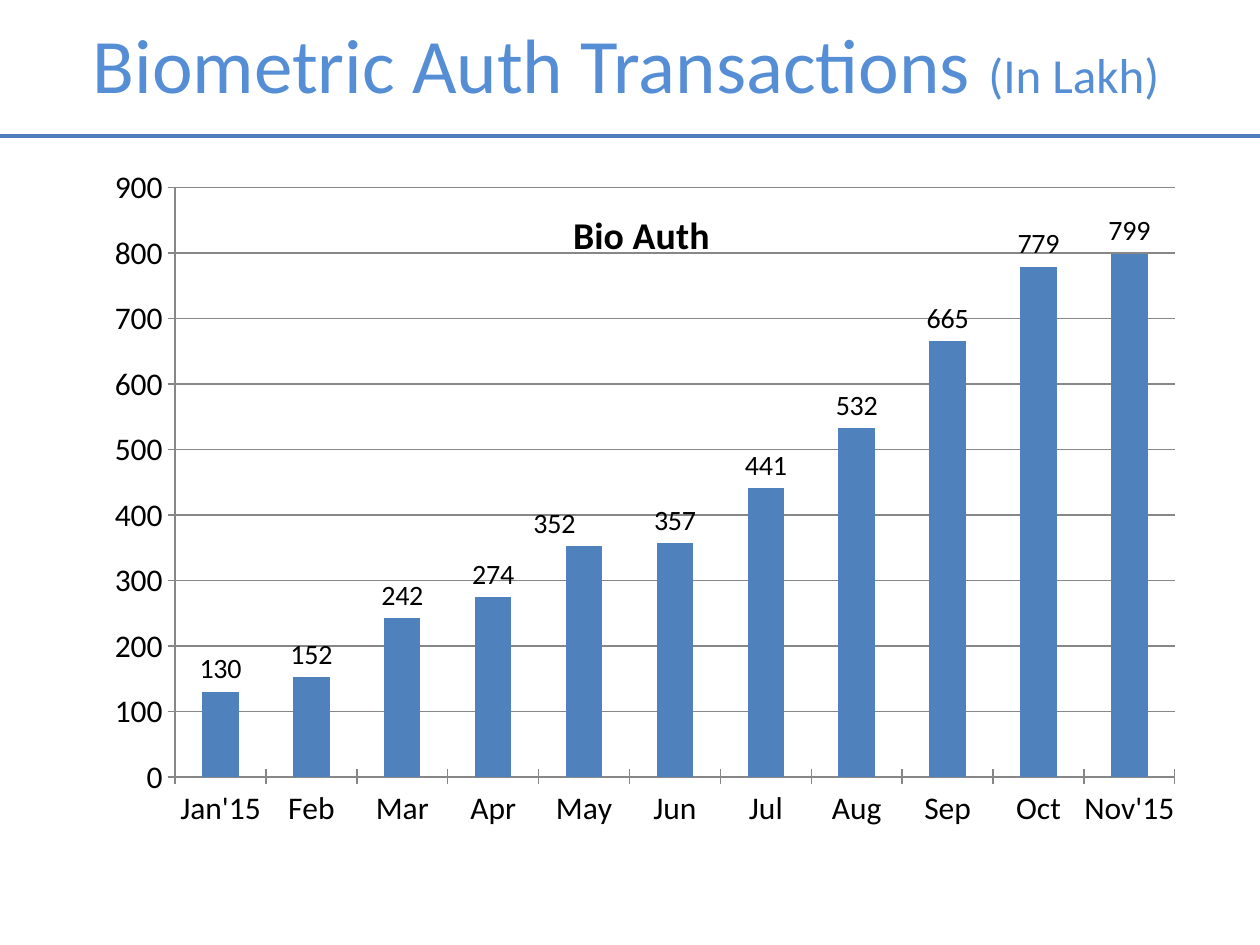
from typing import NamedTuple

from lxml import etree
from pptx import Presentation
from pptx import util as u
from pptx.chart.data import CategoryChartData
from pptx.dml.color import RGBColor
from pptx.enum import chart as ch, shapes, text
from pptx.oxml import parse_xml
from pptx.oxml.ns import nsdecls, qn

FONT = "Calibri"
BLACK, GREY, BLUE = "000000", "878787", "4F81BD"


class Box(NamedTuple):
    left: float
    top: float
    width: float
    height: float

    def cm(self) -> list[u.Cm]:
        return [u.Cm(v) for v in self]


class Month(NamedTuple):
    name: str
    count: int


MONTHS = [
    Month("Jan'15", 130), Month("Feb", 152), Month("Mar", 242),
    Month("Apr", 274), Month("May", 352), Month("Jun", 357),
    Month("Jul", 441), Month("Aug", 532), Month("Sep", 665),
    Month("Oct", 779), Month("Nov'15", 799),
]


def color(code: str) -> RGBColor:
    return RGBColor.from_string(code)


def style(font, size: float, code: str, bold: bool = False) -> None:
    font.name, font.size, font.bold = FONT, u.Pt(size), bold
    font.color.rgb = color(code)


def layout(**parts) -> etree._Element:
    """Make a manual chart layout from its named parts."""
    inner = "".join(f'<c:{k} val="{v}"/>' for k, v in parts.items())
    return parse_xml(f'<c:layout {nsdecls("c")}><c:manualLayout>{inner}'
                     "</c:manualLayout></c:layout>")


def place(node, after: str | None, new) -> None:
    """Put a layout in a chart node, in place of any old one."""
    for old in node.findall(qn("c:layout")):
        node.remove(old)
    spot = node.index(node.find(qn(after))) + 1 if after else 0
    node.insert(spot, new)


def add_title(slide) -> None:
    box = slide.shapes.add_textbox(*Box(1.19, 0.2, 22.86, 2.11).cm())
    frame = box.text_frame
    frame.word_wrap = True
    frame.vertical_anchor = text.MSO_ANCHOR.MIDDLE
    para = frame.paragraphs[0]
    para.alignment = text.PP_ALIGN.CENTER
    for words, size in (("Biometric Auth Transactions ", 44), ("(In Lakh)", 28)):
        run = para.add_run()
        run.text = words
        style(run.font, size, "558ED5")


def add_rule(slide) -> None:
    y = u.Cm(2.74)
    rule = slide.shapes.add_connector(
        shapes.MSO_CONNECTOR.STRAIGHT, 0, y, u.Cm(25.4), y)
    rule.line.color.rgb = color("4B7EBC")
    rule.line.width = u.Pt(2)
    etree.SubElement(rule.element.spPr, qn("a:effectLst"))


def add_bars(slide) -> None:
    data = CategoryChartData()
    data.categories = [m.name for m in MONTHS]
    data.add_series("Bio Auth", [m.count for m in MONTHS])
    chart = slide.shapes.add_chart(
        ch.XL_CHART_TYPE.COLUMN_CLUSTERED,
        *Box(1.27, 3.18, 23.06, 14.6).cm(), data).chart
    style(chart.font, 18, BLACK)
    chart.has_legend = False

    chart.has_title = True
    title = chart.chart_title
    title.text_frame.text = "Bio Auth"
    style(title.text_frame.paragraphs[0].font, 21.6, BLACK, bold=True)
    title.include_in_layout = False
    head = title._element
    place(head, "c:tx", layout(xMode="edge", yMode="edge", x=0.44, y=0.06))
    lay = head.find(qn("c:overlay"))
    if lay is None:
        lay = etree.Element(qn("c:overlay"))
        head.find(qn("c:layout")).addnext(lay)
    lay.set("val", "1")

    area = chart._chartSpace.chart.plotArea
    place(area, None, layout(layoutTarget="inner", xMode="edge", yMode="edge",
                             x=0.098, y=0.041, w=0.874, h=0.814))

    for axis in (chart.category_axis, chart.value_axis):
        axis.major_tick_mark = ch.XL_TICK_MARK.CROSS
        axis.format.line.color.rgb = color(GREY)
        style(axis.tick_labels.font, 18, BLACK)
    scale = chart.value_axis
    scale.minimum_scale, scale.maximum_scale, scale.major_unit = 0, 900, 100
    scale.major_gridlines.format.line.color.rgb = color(GREY)

    plot = chart.plots[0]
    plot.gap_width = 150
    plot.vary_by_categories = False
    bars = plot.series[0]
    bars.format.fill.solid()
    bars.format.fill.fore_color.rgb = color(BLUE)
    tags = bars.data_labels
    tags.show_value = True
    tags.position = ch.XL_LABEL_POSITION.OUTSIDE_END
    style(tags.font, 16, BLACK)

    may = bars.points[4].data_label
    style(may.font, 16, BLACK)
    may.position = ch.XL_LABEL_POSITION.OUTSIDE_END
    place(tags._element.find(qn("c:dLbl")), "c:idx", layout(x=-0.026, y=0))


def main() -> None:
    deck = Presentation()
    deck.slide_width, deck.slide_height = u.Cm(25.4), u.Cm(19.05)
    slide = deck.slides.add_slide(deck.slide_layouts[6])
    add_title(slide)
    add_rule(slide)
    add_bars(slide)
    deck.save("out.pptx")


if __name__ == "__main__":
    main()
